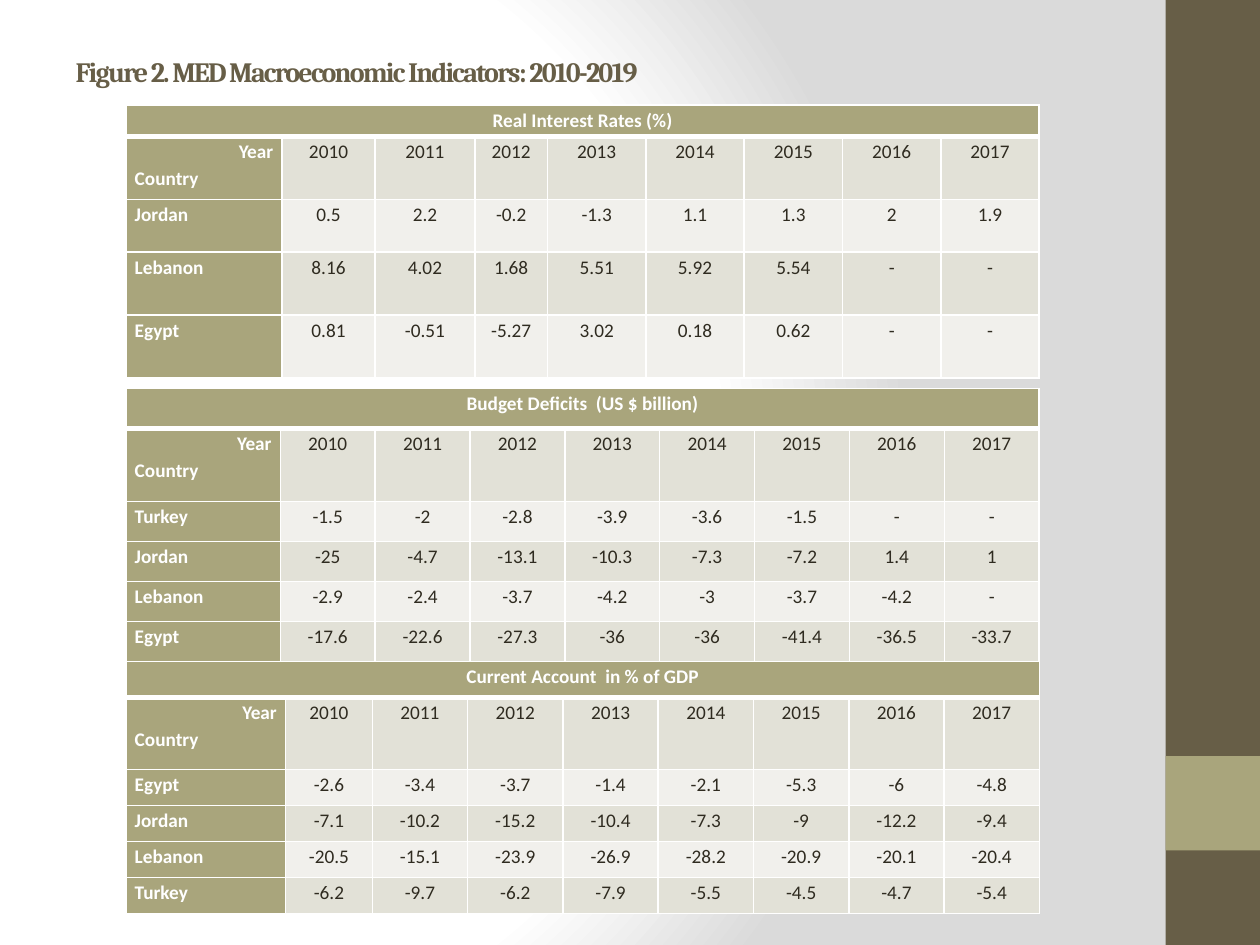
from dataclasses import dataclass

from lxml import etree
from pptx import Presentation
from pptx.dml.color import RGBColor
from pptx.enum import shapes, text
from pptx.oxml import parse_xml
from pptx.util import Pt

NS = "http://schemas.openxmlformats.org/drawingml/2006/main"
AL = text.PP_ALIGN


@dataclass(frozen=True)
class Theme:
    dark: str = "675E47"
    head: str = "A9A57C"
    ink: str = "2F2B20"
    white: str = "FFFFFF"
    grey: str = "DADADA"
    bands: tuple = ("E2E1D7", "F1F0EC")
    title: tuple = ("Cambria", 16)
    cell: tuple = ("Calibri", 11)


def put(obj, vals):
    """Set attributes from a dict of format values."""
    for key, val in vals.items():
        setattr(obj, key, val)


class Deck:
    def __init__(self, theme):
        self.theme = theme
        self.prs = Presentation()
        put(self.prs, {"slide_width": Pt(720), "slide_height": Pt(540)})
        self.slide = self.prs.slides.add_slide(self.prs.slide_layouts[5])

    def back(self):
        """Round gradient, white on the left and grey on the right."""
        t = self.theme
        fill = self.slide.background.fill
        fill.gradient()
        old = self.slide.background._cSld.find(f".//{{{NS}}}gradFill")
        stops = "".join(
            f'<a:gs pos="{pos * 1000}"><a:srgbClr val="{hue}"/></a:gs>'
            for pos, hue in ((0, t.white), (75, t.white), (100, t.grey)))
        new = parse_xml(
            f'<a:gradFill xmlns:a="{NS}" rotWithShape="1">'
            f'<a:gsLst>{stops}</a:gsLst><a:path path="circle">'
            '<a:fillToRect l="20000" t="50000" r="100000" b="50000"/>'
            '</a:path></a:gradFill>')
        old.getparent().replace(old, new)

    def bar(self, left, top, wide, high, hue):
        box = self.slide.shapes.add_shape(
            shapes.MSO_SHAPE.RECTANGLE, Pt(left), Pt(top), Pt(wide), Pt(high))
        box.shadow.inherit = False
        box.fill.solid()
        box.fill.fore_color.rgb = RGBColor.from_string(hue)
        box.line.fill.background()

    def font(self, run, face, hue, bold):
        name, size = face
        put(run.font, {"name": name, "size": Pt(size), "bold": bold})
        run.font.color.rgb = RGBColor.from_string(hue)

    def title(self, words, left, top, wide, high):
        t = self.theme
        box = self.slide.shapes.title
        put(box, {"left": Pt(left), "top": Pt(top),
                  "width": Pt(wide), "height": Pt(high)})
        put(box.text_frame, {"text": words, "word_wrap": True,
                             "auto_size": text.MSO_AUTO_SIZE.NONE,
                             "vertical_anchor": text.MSO_ANCHOR.MIDDLE})
        para = box.text_frame.paragraphs[0]
        para.alignment = AL.LEFT
        self.font(para.runs[0], t.title, t.dark, True)
        para.runs[0].font._element.set("spc", "-100")

    def edges(self, cell, top, base):
        """White cell borders; top and base are widths in points."""
        props = cell._tc.get_or_add_tcPr()
        for side, wide in zip("LRTB", (1, 1, top, base)):
            line = etree.SubElement(props, f"{{{NS}}}ln{side}", w=str(Pt(wide)))
            fill = etree.SubElement(line, f"{{{NS}}}solidFill")
            etree.SubElement(fill, f"{{{NS}}}srgbClr", val=self.theme.white)

    def cell(self, cell, words, aligns, row, head):
        t = self.theme
        self.edges(cell, 3 if row == 1 else 1, 3 if row == 0 else 1)
        put(cell, {"margin_left": Pt(5), "margin_right": Pt(5),
                   "margin_top": 0, "margin_bottom": 0})
        cell.fill.solid()
        hue = t.head if head else t.bands[(row - 1) % 2]
        cell.fill.fore_color.rgb = RGBColor.from_string(hue)
        cell.text_frame.text = words
        for para, side in zip(cell.text_frame.paragraphs, aligns):
            put(para, {"alignment": side, "line_spacing": 1.15})
            for run in para.runs:
                self.font(run, t.cell, t.white if head else t.ink, head)

    def table(self, name, top, cols, rows, data):
        """Columns not listed in cols share the remaining width equally."""
        left, wide, count = 72, 522, 9
        rest = (wide - sum(cols)) / (count - len(cols))
        cols = cols + [rest] * (count - len(cols))
        grid = self.slide.shapes.add_table(
            len(rows), count, Pt(left), Pt(top), Pt(wide), Pt(sum(rows))).table
        for col, size in zip(grid.columns, cols):
            col.width = Pt(size)
        for row, size in zip(grid.rows, rows):
            row.height = Pt(size)
        years = [str(year) for year in range(2010, 2018)]
        lines = [[name] + [""] * (count - 1), ["Year\nCountry"] + years]
        lines += [[land] + vals.split() for land, vals in data.items()]
        for r, line in enumerate(lines):
            for c, words in enumerate(line):
                if c or r == 0:
                    aligns = [AL.CENTER]
                else:
                    aligns = [AL.RIGHT, AL.LEFT] if r == 1 else [AL.LEFT]
                self.cell(grid.cell(r, c), words, aligns, r, r == 0 or c == 0)
        grid.cell(0, 0).merge(grid.cell(0, count - 1))


def main():
    theme = Theme()
    deck = Deck(theme)

    # Background and side bars
    deck.back()
    deck.bar(666, 0, 54, 540, theme.dark)
    deck.bar(666, 432, 54, 54, theme.head)

    # Heading
    deck.title("Figure 2. MED Macroeconomic Indicators: 2010-2019",
               36, 21.6, 636, 38.4)

    # Indicator tables
    deck.table("Current Account  in % of GDP", 378, [91.2, 49.6],
               [20.6, 41.2] + [20.6] * 4, {
                   "Egypt": "-2.6 -3.4 -3.7 -1.4 -2.1 -5.3 -6 -4.8",
                   "Jordan": "-7.1 -10.2 -15.2 -10.4 -7.3 -9 -12.2 -9.4",
                   "Lebanon": "-20.5 -15.1 -23.9 -26.9 -28.2 -20.9 -20.1 -20.4",
                   "Turkey": "-6.2 -9.7 -6.2 -7.9 -5.5 -4.5 -4.7 -5.4"})
    deck.table("Budget Deficits  (US $ billion)", 222, [88.2],
               [22.9, 41.6] + [22.9] * 4, {
                   "Turkey": "-1.5 -2 -2.8 -3.9 -3.6 -1.5 - -",
                   "Jordan": "-25 -4.7 -13.1 -10.3 -7.3 -7.2 1.4 1",
                   "Lebanon": "-2.9 -2.4 -3.7 -4.2 -3 -3.7 -4.2 -",
                   "Egypt": "-17.6 -22.6 -27.3 -36 -36 -41.4 -36.5 -33.7"})
    deck.table("Real Interest Rates (%)", 60, [89.2, 53.2, 57, 41.6],
               [18, 36, 30, 36, 36], {
                   "Jordan": "0.5 2.2 -0.2 -1.3 1.1 1.3 2 1.9",
                   "Lebanon": "8.16 4.02 1.68 5.51 5.92 5.54 - -",
                   "Egypt": "0.81 -0.51 -5.27 3.02 0.18 0.62 - -"})

    deck.prs.save("out.pptx")


if __name__ == "__main__":
    main()
